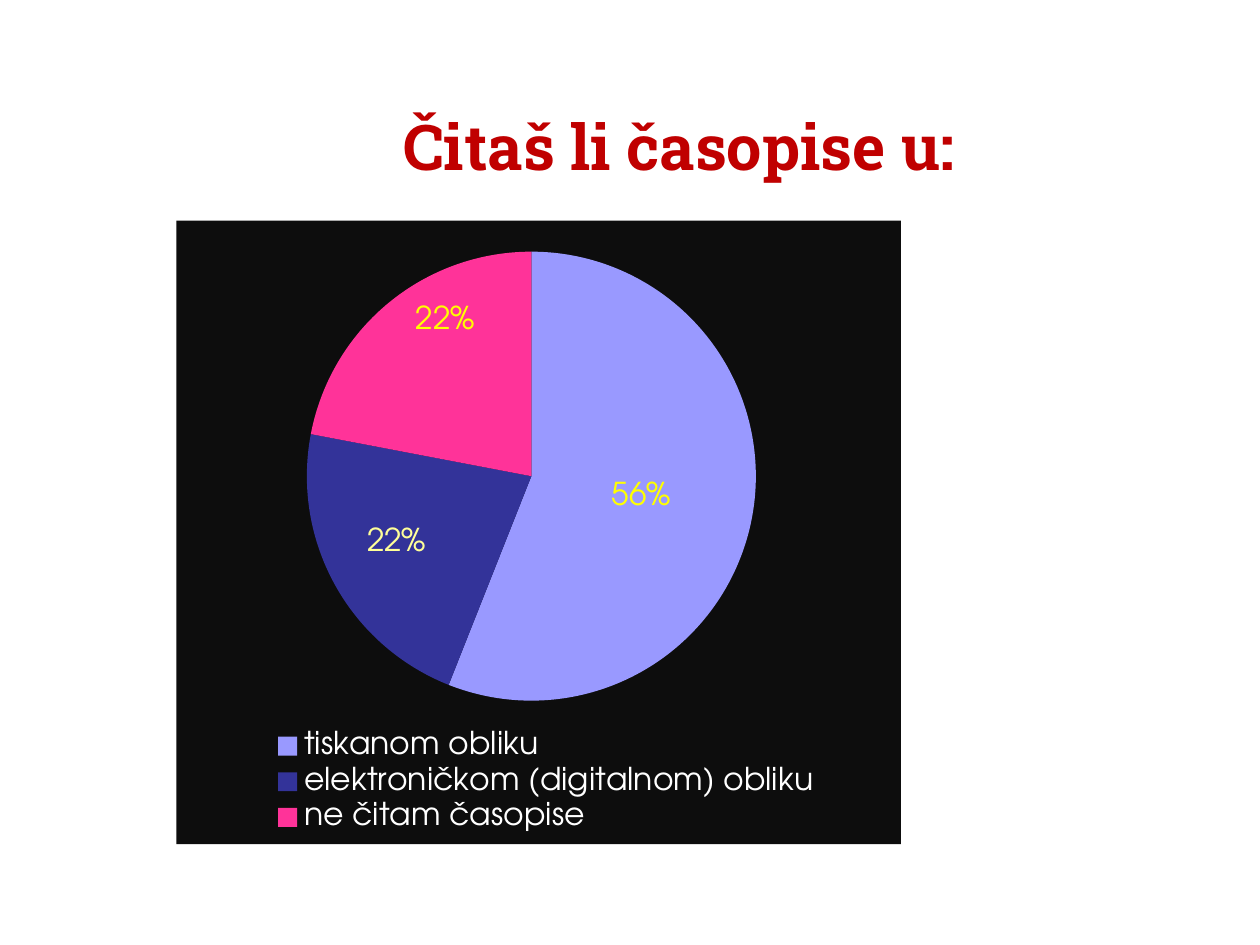
from dataclasses import dataclass

from lxml.etree import SubElement
from pptx import Presentation
from pptx.chart.data import CategoryChartData
from pptx.dml.color import RGBColor
from pptx.enum.chart import XL_CHART_TYPE, XL_LABEL_POSITION, XL_LEGEND_POSITION
from pptx.enum.text import MSO_ANCHOR, PP_ALIGN
from pptx.oxml import parse_xml
from pptx.oxml.ns import nsdecls, qn
from pptx.util import Pt

# Content
TITLE = "Čitaš li časopise u:"
# answer, share, slice colour, label colour, label shift (fractions of the chart)
ANSWERS = [
    ("tiskanom obliku", 56, "9999FF", "FFFF00", None),
    ("elektroničkom (digitalnom) obliku", 22, "333399", "FFFF99", (-0.05, 0.02)),
    ("ne čitam časopise", 22, "FF3399", "FFFF00", (-0.02, -0.11)),
]


@dataclass
class Theme:
    title_font: str = "Roboto Slab"
    chart_font: str = "TeX Gyre Adventor"
    title_size: int = 36
    chart_size: int = 18
    title: str = "C00000"
    panel: str = "0D0D0D"
    legend: str = "FFFFFF"


THEME = Theme()


def style_font(font, name=THEME.chart_font, size=THEME.chart_size, color="000000", bold=False):
    font.name, font.size, font.bold = name, Pt(size), bold
    font.color.rgb = RGBColor.from_string(color)


def write_text(frame, text, align=PP_ALIGN.CENTER, anchor=MSO_ANCHOR.MIDDLE, **font_format):
    frame.word_wrap = True
    frame.vertical_anchor = anchor
    para = frame.paragraphs[0]
    para.alignment = align
    span = para.add_run()
    span.text = text
    style_font(span.font, **font_format)


def make_layout(**settings):
    layout = parse_xml(f"<c:layout {nsdecls('c')}/>")
    manual = SubElement(layout, qn("c:manualLayout"))
    for name, value in settings.items():
        SubElement(manual, qn(f"c:{name}")).set("val", str(value))
    return layout


def replace_layout(parent, layout, after=None):
    for old in parent.findall(qn("c:layout")):
        parent.remove(old)
    if after is None:
        parent.insert(0, layout)
    else:
        parent.find(qn(after)).addnext(layout)


deck = Presentation()
deck.slide_width, deck.slide_height = Pt(720), Pt(540)
page = deck.slides.add_slide(deck.slide_layouts[5])

# Title
title = page.shapes.title
title.left, title.top, title.width, title.height = Pt(100.8), Pt(54), Pt(574.56), Pt(57.6)
write_text(title.text_frame, TITLE, name=THEME.title_font, size=THEME.title_size,
           color=THEME.title, bold=True)

# Pie chart
data = CategoryChartData()
data.categories = [answer[0] for answer in ANSWERS]
data.add_series("Series 1", [answer[1] for answer in ANSWERS])
chart = page.shapes.add_chart(XL_CHART_TYPE.PIE, Pt(100.8), Pt(126), Pt(414), Pt(356.4), data).chart
chart.has_title = False
style_font(chart.font)
plot = chart.plots[0]
plot.vary_by_categories = True
series = plot.series[0]
series.data_labels.show_percentage = True
series.data_labels.show_value = False

# Slices and their labels
for index, (_, _, fill, label_color, shift) in enumerate(ANSWERS):
    point = series.points[index]
    point.format.fill.solid()
    point.format.fill.fore_color.rgb = RGBColor.from_string(fill)
    point.format.line.fill.background()
    style_font(point.data_label.font, color=label_color)
    point.data_label.position = XL_LABEL_POSITION.CENTER
    label = series.data_labels._element.findall(qn("c:dLbl"))[index]
    label.find(qn("c:showVal")).set("val", "0")
    label.find(qn("c:showPercent")).set("val", "1")
    if shift:
        replace_layout(label, make_layout(x=shift[0], y=shift[1]), after="c:idx")

# Legend
chart.has_legend = True
chart.legend.position = XL_LEGEND_POSITION.BOTTOM
chart.legend.include_in_layout = False
style_font(chart.legend.font, color=THEME.legend)

# Places of pie and legend, as fractions of the chart
replace_layout(chart._chartSpace.chart.plotArea,
               make_layout(layoutTarget="inner", xMode="edge", yMode="edge",
                           x=0.18, y=0.05, w=0.62, h=0.72))
replace_layout(chart.legend._element,
               make_layout(xMode="edge", yMode="edge", x=0.12, y=0.81, w=0.78, h=0.18),
               after="c:legendPos")

# Dark panel behind the pie
chart._chartSpace.chart.addnext(parse_xml(
    f'<c:spPr {nsdecls("c", "a")}><a:solidFill><a:srgbClr val="{THEME.panel}"/></a:solidFill>'
    "<a:ln><a:noFill/></a:ln></c:spPr>"))

deck.save("out.pptx")
